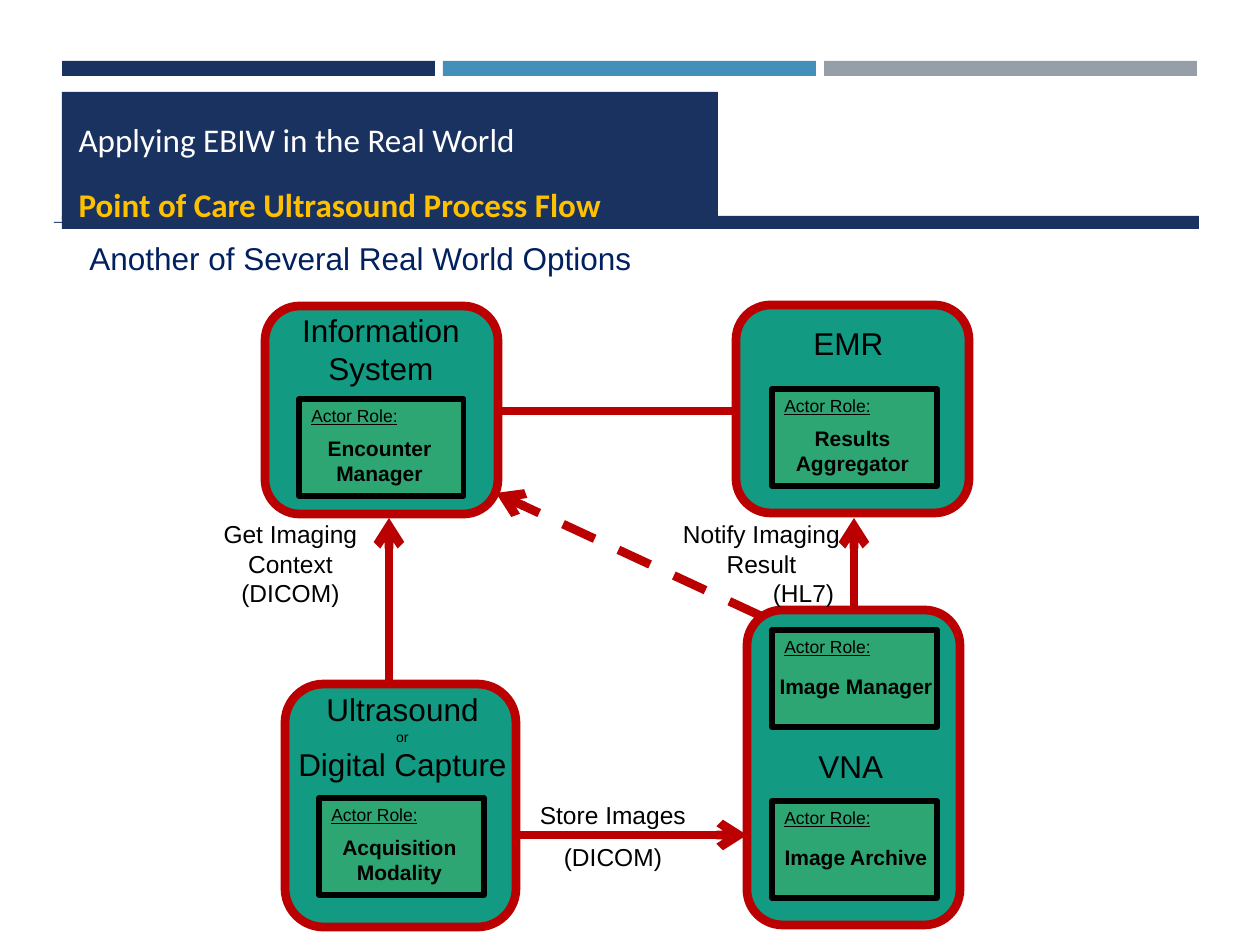
from lxml import etree
from pptx import Presentation
from pptx import util as u
from pptx.dml.color import RGBColor
from pptx.enum import dml, shapes, text
from pptx.oxml.ns import qn

PX_PER_INCH = 126
NAVY, TEAL, RED, BLACK, WHITE = "1A3260", "129A83", "BA0000", "000000", "FFFFFF"
LEFT, CENTER = text.PP_ALIGN.LEFT, text.PP_ALIGN.CENTER
ROLE_WIDTH, ROLE_HEIGHT = 165, 97


def px(value):
    return u.Emu(round(value * 914400 / PX_PER_INCH))


def color(value):
    return RGBColor.from_string(value)


def add_box(slide, kind, bounds, fill, line=None, weight=0, alpha=None):
    shape = slide.shapes.add_shape(kind, *map(px, bounds))
    shape.shadow.inherit = False
    shape.fill.solid()
    shape.fill.fore_color.rgb = color(fill)
    if alpha:
        fill_color = shape._element.spPr.find(qn("a:solidFill"))[0]
        etree.SubElement(fill_color, qn("a:alpha"), val=str(alpha * 1000))
    if line:
        shape.line.color.rgb = color(line)
        shape.line.width = u.Pt(weight)
    else:
        shape.line.fill.background()
    return shape


def add_rectangle(slide, bounds, fill, **style):
    return add_box(slide, shapes.MSO_SHAPE.RECTANGLE, bounds, fill, **style)


def add_system(slide, bounds):
    return add_box(slide, shapes.MSO_SHAPE.ROUNDED_RECTANGLE, bounds, TEAL, RED, 5)


def add_run(paragraph, words, size, ink=BLACK, font="Arial", bold=False, underline=False):
    run = paragraph.add_run()
    run.text = words
    run.font.size = u.Pt(size)
    run.font.name = font
    run.font.bold = bold
    run.font.underline = underline
    run.font.color.rgb = color(ink)


def add_text(slide, bounds, lines, size, align=CENTER, **style):
    box = slide.shapes.add_textbox(*map(px, bounds))
    frame = box.text_frame
    frame.word_wrap = True
    for index, line in enumerate(lines):
        words, line_size = line if isinstance(line, tuple) else (line, size)
        paragraph = frame.paragraphs[0] if index == 0 else frame.add_paragraph()
        paragraph.alignment = align
        add_run(paragraph, words, line_size, **style)
    return frame


def add_role(slide, left, top, *names):
    add_rectangle(slide, (left, top, ROLE_WIDTH, ROLE_HEIGHT), "FFFF00",
                  line=BLACK, weight=3, alpha=12)
    add_text(slide, (left, top, ROLE_WIDTH, 34), ["Actor Role:"], 10, LEFT, underline=True)
    if len(names) == 1:
        bounds = (left - 9, top + 37, 186, 38)
    else:
        bounds = (left - 2, top + 30, ROLE_WIDTH, 63)
    add_text(slide, bounds, names, 12, bold=True)


def add_flow(slide, start, end, arrow=True, dashed=False):
    connector = slide.shapes.add_connector(
        shapes.MSO_CONNECTOR.STRAIGHT, *map(px, start + end))
    connector.line.color.rgb = color(RED)
    connector.line.width = u.Pt(5)
    if dashed:
        connector.line.dash_style = dml.MSO_LINE.DASH
    if arrow:
        etree.SubElement(connector.line._get_or_add_ln(), qn("a:tailEnd"), type="arrow")
    etree.SubElement(connector._element.spPr, qn("a:effectLst"))


def add_header(slide):
    for left, fill in ((62, NAVY), (443, "4590B8"), (824, "969FA7")):
        add_rectangle(slide, (left, 61, 373, 15), fill)
    add_rectangle(slide, (54, 222, 1109, 127), NAVY)
    add_rectangle(slide, (62, 92, 656, 127), NAVY)
    add_rectangle(slide, (21, 223, 1160, 141), WHITE)
    add_rectangle(slide, (62, 216, 1137, 13), NAVY)


def format_title(slide):
    title = slide.shapes.title
    slide.shapes._spTree.append(title._element)
    title.left, title.top, title.width, title.height = map(px, (66, 111, 886, 103))
    frame = title.text_frame
    frame.word_wrap = True
    frame.auto_size = text.MSO_AUTO_SIZE.NONE
    frame.vertical_anchor = text.MSO_ANCHOR.TOP
    frame.margin_top = px(8)
    first, second = frame.paragraphs[0], frame.add_paragraph()
    for paragraph in (first, second):
        paragraph.alignment = LEFT
        paragraph.line_spacing = 1.0
    first.space_before = u.Pt(0)
    second.space_before = u.Pt(14.6)
    add_run(first, "Applying EBIW in the Real World", 18.9, WHITE, "Calibri")
    add_run(second, "Point of Care Ultrasound Process Flow", 18.9, "FFC000", "Calibri", bold=True)


def add_systems(slide):
    add_system(slide, (736, 305, 233, 208))
    add_role(slide, 772, 389, "Results", "Aggregator")
    add_text(slide, (801, 318, 125, 50), ["EMR"], 18, LEFT)

    add_system(slide, (285, 684, 231, 243))
    add_role(slide, 319, 798, "Acquisition", "Modality")
    add_text(slide, (282, 684, 241, 106), ["Ultrasound", ("or", 8), "Digital Capture"], 18)

    add_system(slide, (747, 610, 213, 315))
    add_role(slide, 772, 630, "Image Manager")
    add_role(slide, 772, 801, "Image Archive")
    add_text(slide, (806, 741, 103, 50), ["VNA"], 18, LEFT)

    add_system(slide, (265, 306, 233, 208))
    add_role(slide, 299, 399, "Encounter", "Manager")
    add_text(slide, (268, 305, 226, 89), ["Information", "System"], 18)


def add_flows(slide):
    add_flow(slide, (389, 684), (389, 518))
    add_flow(slide, (515, 835), (747, 835))
    add_flow(slide, (854, 610), (854, 518))
    add_flow(slide, (761, 616), (496, 493), dashed=True)
    add_flow(slide, (499, 411), (732, 411), arrow=False)


def add_labels(slide):
    add_text(slide, (77, 233, 745, 50), ["Another of Several Real World Options"],
             18, LEFT, ink="002060")
    add_text(slide, (184, 513, 213, 102), ["Get Imaging", "Context", "(DICOM)"], 14)
    store = add_text(slide, (499, 794, 228, 84), ["Store Images", "(DICOM)"], 14)
    store.paragraphs[1].space_before = u.Pt(7)
    notify = add_text(slide, (655, 513, 213, 102), ["Notify Imaging Result", "(HL7)"], 14)
    notify.paragraphs[1]._p.get_or_add_pPr().set("marL", str(px(84)))


def main():
    presentation = Presentation()
    presentation.slide_width, presentation.slide_height = px(1260), px(945)
    slide = presentation.slides.add_slide(presentation.slide_layouts[5])
    add_header(slide)
    format_title(slide)
    add_systems(slide)
    add_flows(slide)
    add_labels(slide)
    presentation.save("out.pptx")


if __name__ == "__main__":
    main()
